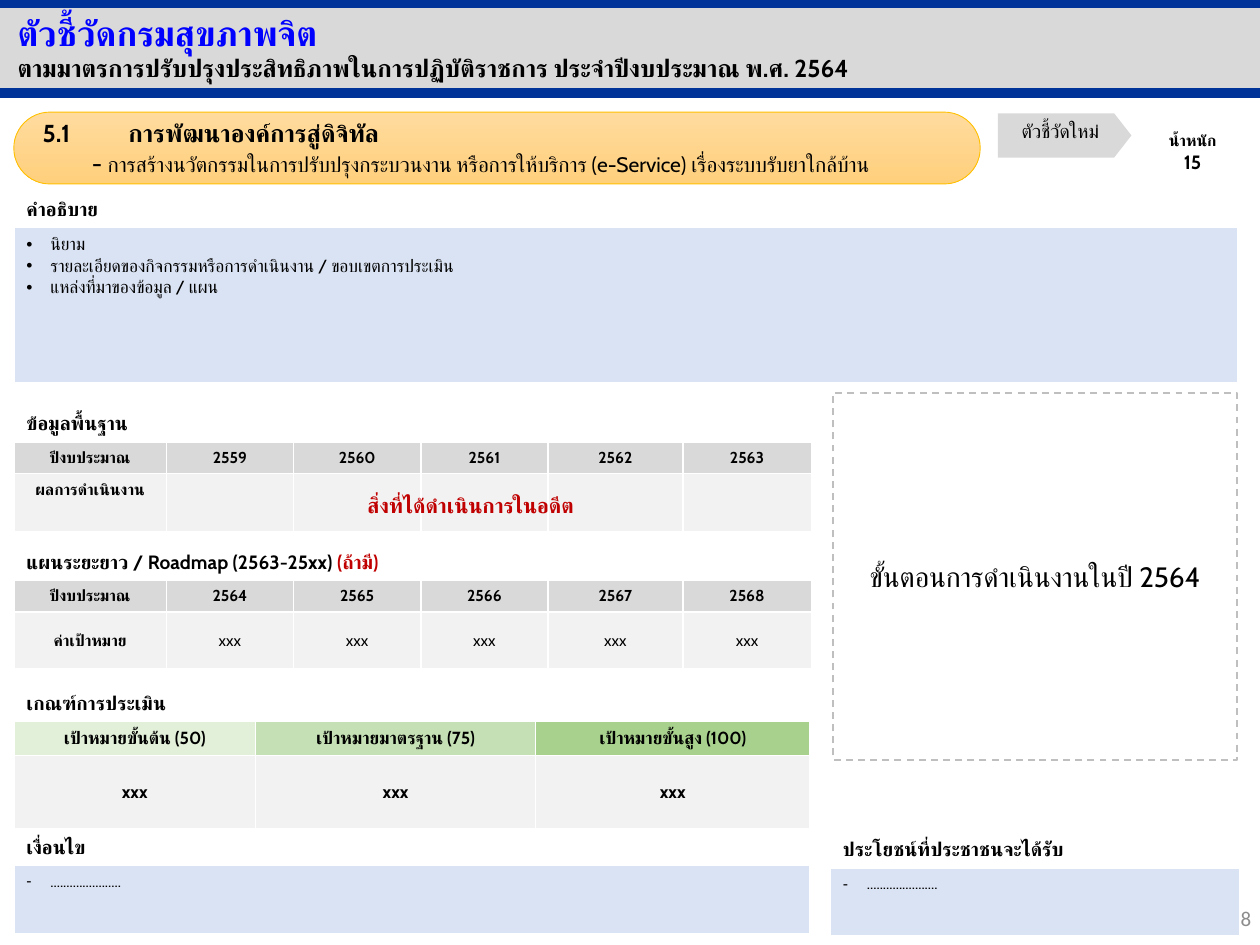
from dataclasses import dataclass, field

from lxml.etree import SubElement
from pptx import Presentation
from pptx.dml.color import RGBColor
from pptx.enum.dml import MSO_LINE
from pptx.enum.shapes import MSO_CONNECTOR, MSO_SHAPE
from pptx.enum.text import MSO_ANCHOR, MSO_AUTO_SIZE, PP_ALIGN
from pptx.oxml.ns import qn
from pptx.util import Inches, Pt

CENTER = PP_ALIGN.CENTER
MIDDLE = MSO_ANCHOR.MIDDLE
GREY, PALE, BLUE, WHITE, RED = "D9D9D9", "F2F2F2", "DAE3F3", "FFFFFF", "C00000"


def color(value):
    return RGBColor.from_string(value)


def assign(target, values):
    for name, value in values.items():
        setattr(target, name, value)


@dataclass
class Line:
    runs: list
    align: PP_ALIGN = PP_ALIGN.LEFT
    indent: tuple = None
    bullet: str = None
    tab: float = None


@dataclass
class Cell:
    lines: list = field(default_factory=list)
    fill: str = WHITE
    format: dict = field(default_factory=dict)


def run(text, size, bold=True, ink="000000", name="Cabin"):
    return text, {"size": Pt(size), "bold": bold, "name": name}, ink


def centered(text, size, bold=True, ink="000000"):
    return [Line([run(text, size, bold, ink)], CENTER)]


def heading(text):
    return Cell([Line([run(text, 11)])])


def bullets(texts, mark, size):
    return Cell([Line([run(text, size, False)], indent=(0.19, -0.19), bullet=mark)
                 for text in texts], BLUE)


class SlideBuilder:
    def __init__(self, slide):
        self.slide = slide
        self.shapes = slide.shapes
        self.frame_format = {"word_wrap": True, "auto_size": MSO_AUTO_SIZE.NONE,
                             "vertical_anchor": MSO_ANCHOR.TOP}

    def add_lines(self, frame, lines):
        for index, line in enumerate(lines):
            paragraph = frame.add_paragraph() if index else frame.paragraphs[0]
            paragraph.alignment = line.align
            properties = paragraph._p.get_or_add_pPr()
            if line.indent:
                margin, first = line.indent
                properties.set("marL", str(Inches(margin)))
                properties.set("indent", str(Inches(first)))
            if line.bullet:
                SubElement(properties, qn("a:buFont"), typeface="Arial")
                SubElement(properties, qn("a:buChar"), char=line.bullet)
            if line.tab:
                tabs = SubElement(properties, qn("a:tabLst"))
                SubElement(tabs, qn("a:tab"), pos=str(Inches(line.tab)), algn="l")
            for text, values, ink in line.runs:
                text_run = paragraph.add_run()
                text_run.text = text
                assign(text_run.font, values)
                text_run.font.color.rgb = color(ink)
                SubElement(text_run._r.get_or_add_rPr(), qn("a:cs"), typeface=values["name"])

    def title(self, box, lines):
        shape = self.shapes.title
        assign(shape, dict(zip(("left", "top", "width", "height"), map(Inches, box))))
        assign(shape.text_frame, self.frame_format)
        self.add_lines(shape.text_frame, lines)
        shape.element.getparent().append(shape.element)

    def text(self, box, lines, anchor=MSO_ANCHOR.TOP):
        frame = self.shapes.add_textbox(*map(Inches, box)).text_frame
        assign(frame, {**self.frame_format, "vertical_anchor": anchor})
        self.add_lines(frame, lines)

    def shape(self, kind, box, fill, lines=(), anchor=MSO_ANCHOR.TOP,
              adjustment=None, outline=None):
        shape = self.shapes.add_shape(kind, *map(Inches, box))
        shape.shadow.inherit = False
        if isinstance(fill, tuple):
            shape.fill.gradient()
            shape.fill.gradient_angle = 270
            for stop, value in zip(shape.fill.gradient_stops, fill):
                stop.color.rgb = color(value)
        else:
            shape.fill.solid()
            shape.fill.fore_color.rgb = color(fill)
        if outline:
            ink, width, dash = outline
            shape.line.color.rgb = color(ink)
            assign(shape.line, {"width": Pt(width), "dash_style": dash})
        else:
            shape.line.fill.background()
        if adjustment is not None:
            shape.adjustments[0] = adjustment
        assign(shape.text_frame, {**self.frame_format, "vertical_anchor": anchor})
        self.add_lines(shape.text_frame, lines)

    def rule(self, top, ink, width):
        connector = self.shapes.add_connector(
            MSO_CONNECTOR.STRAIGHT, 0, Inches(top), Inches(10), Inches(top))
        connector.line.color.rgb = color(ink)
        connector.line.width = Pt(width)
        SubElement(connector._element.spPr, qn("a:effectLst"))

    def table(self, left, top, widths, heights, rows):
        graphic = self.shapes.add_table(len(rows), len(widths), Inches(left), Inches(top),
                                        Inches(sum(widths)), Inches(sum(heights)))
        table = graphic.table
        assign(table, {"first_row": False, "horz_banding": False})
        for column, width in zip(table.columns, widths):
            column.width = Inches(width)
        for row, height in zip(table.rows, heights):
            row.height = Inches(height)
        if len(widths) > 1:
            table.cell(0, 0).merge(table.cell(0, len(widths) - 1))
        for row_index, row in enumerate(rows):
            for column_index, content in enumerate(row):
                cell = table.cell(row_index, column_index)
                self.add_lines(cell.text_frame, content.lines)
                assign(cell, content.format)
                self.border(cell)
                cell.fill.solid()
                cell.fill.fore_color.rgb = color(content.fill)

    def border(self, cell):
        properties = cell._tc.get_or_add_tcPr()
        for side in ("a:lnL", "a:lnR", "a:lnT", "a:lnB"):
            edge = SubElement(properties, qn(side), w=str(Pt(1)))
            SubElement(SubElement(edge, qn("a:solidFill")), qn("a:srgbClr"), val=WHITE)


def year_table(builder, top, title, first_year, heights, label, values):
    years = ["ปีงบประมาณ", *(str(first_year + offset) for offset in range(5))]
    builder.table(0.11, top, [1.21, 1.01, 1.01, 1.01, 1.07, 1.02], heights, [
        [title],
        [Cell(centered(year, 9), GREY) for year in years],
        [label, *[values] * 5],
    ])


def main():
    presentation = Presentation()
    presentation.slide_width = Inches(10)
    presentation.slide_height = Inches(7.5)
    builder = SlideBuilder(presentation.slides.add_slide(presentation.slide_layouts[5]))

    builder.shape(MSO_SHAPE.RECTANGLE, (0, 0.05, 10, 0.68), GREY)
    for top in (0.74, 0.02):
        builder.rule(top, "003399", 6)
    builder.shape(MSO_SHAPE.ROUNDED_RECTANGLE, (0.11, 0.89, 7.67, 0.57), ("FFDB9E", "FFD07C"),
                  adjustment=0.5, outline=("FFC000", 0.5, MSO_LINE.SOLID))
    builder.text((7.78, 7.09, 2.25, 0.4),
                 [Line([run("8", 12, False, "8C8C8C", "Calibri")], PP_ALIGN.RIGHT)], MIDDLE)
    builder.text((0.24, 0.89, 9.18, 0.57), [
        Line([run("5.1 \tการพัฒนาองค์การสู่ดิจิทัล", 14)], indent=(0.68, -0.68), tab=0.39),
        Line([run("- ", 14, False),
              run("การสร้างนวัตกรรมในการปรับปรุงกระบวนงาน หรือการให้บริการ (e-Service) "
                  "เรื่องระบบรับยาใกล้บ้าน", 12, False)], indent=(0.68, -0.29)),
    ])

    builder.table(0.11, 1.52, [9.71], [0.28, 1.23], [
        [heading("คำอธิบาย")],
        [bullets(["นิยาม", "รายละเอียดของกิจกรรมหรือการดำเนินงาน / ขอบเขตการประเมิน",
                  "แหล่งที่มาของข้อมูล / แผน"], "•", 10)],
    ])
    year_table(builder, 3.22, heading("ข้อมูลพื้นฐาน"), 2559, [0.28, 0.25, 0.46],
               Cell(centered("ผลการดำเนินงาน", 9), PALE), Cell(fill=PALE))

    targets = {"เป้าหมายขั้นต้น (50)": "E2F0D9", "เป้าหมายมาตรฐาน (75)": "C5E0B4",
               "เป้าหมายขั้นสูง (100)": "A9D18E"}
    middle = {"vertical_anchor": MIDDLE}
    builder.table(0.11, 5.44, [1.92, 2.22, 2.18], [0.28, 0.27, 0.59], [
        [heading("เกณฑ์การประเมิน")],
        [Cell(centered(label, 10), fill) for label, fill in targets.items()],
        [Cell(centered("xxx", 10), PALE, middle)] * 3,
    ])
    for left, top, width, label in ((6.59, 6.6, 3.25, "ประโยชน์ที่ประชาชนจะได้รับ"),
                                    (0.11, 6.58, 6.32, "เงื่อนไข")):
        builder.table(left, top, [width], [0.29, 0.54],
                      [[heading(label)], [bullets(["." * 22], "-", 9)]])

    builder.shape(MSO_SHAPE.PENTAGON, (7.92, 0.9, 1.06, 0.35), GREY,
                  centered("ตัวชี้วัดใหม่", 11, False), adjustment=0.39)
    builder.text((8.86, 0.99, 1.21, 0.44), centered("น้ำหนัก", 9) + centered("15", 11))
    builder.shape(MSO_SHAPE.RECTANGLE, (6.61, 3.12, 3.21, 2.91), WHITE,
                  centered("ขั้นตอนการดำเนินงานในปี 2564", 16, False), MIDDLE,
                  outline=("BFBFBF", 1, MSO_LINE.DASH))
    builder.text((1.97, 3.86, 3.53, 0.3), centered("สิ่งที่ได้ดำเนินการในอดีต", 12, ink=RED))

    tight = {**middle, "margin_left": Inches(0.01), "margin_top": Inches(0.01),
             "margin_right": Inches(0.01), "margin_bottom": 0}
    roadmap = Cell([Line([run("แผนระยะยาว / Roadmap (2563-25xx) ", 11),
                          run("(ถ้ามี)", 11, ink=RED)])])
    year_table(builder, 4.32, roadmap, 2564, [0.28, 0.25, 0.45],
               Cell(centered("ค่าเป้าหมาย", 9), PALE, middle),
               Cell(centered("xxx", 9, False), PALE, tight))

    builder.title((0.04, 0.04, 9.41, 0.67), [
        Line([run("ตัวชี้วัดกรมสุขภาพจิต", 20, ink="0000FF")]),
        Line([run("ตามมาตรการปรับปรุงประสิทธิภาพในการปฏิบัติราชการ "
                  "ประจำปีงบประมาณ พ.ศ. 2564", 14)]),
    ])
    presentation.save("out.pptx")


if __name__ == "__main__":
    main()
